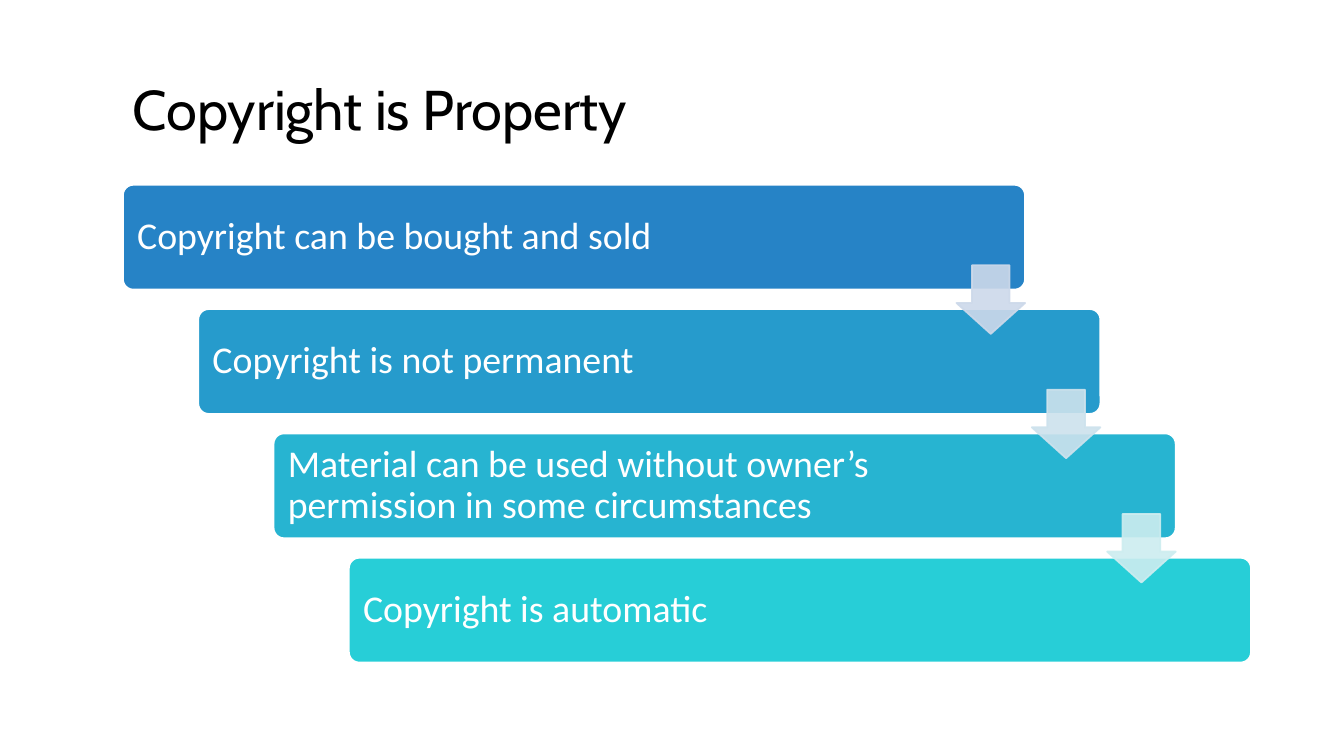
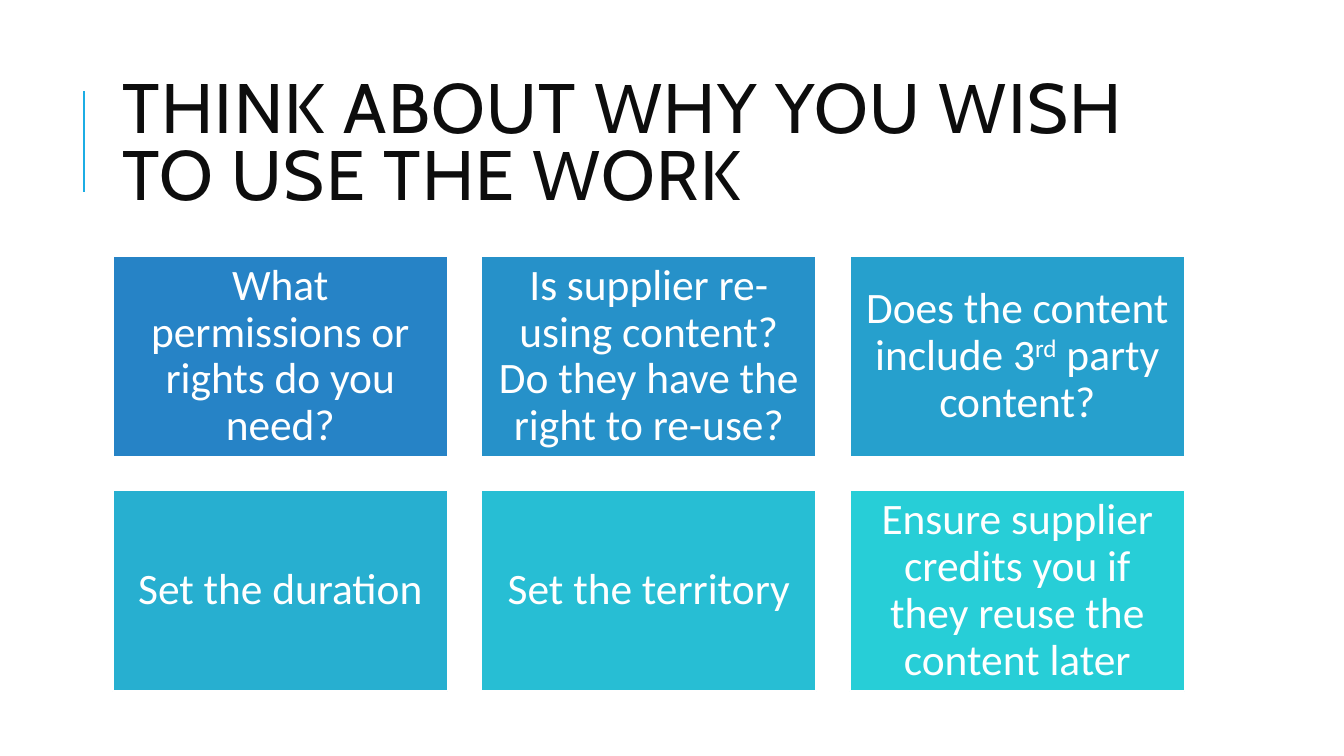
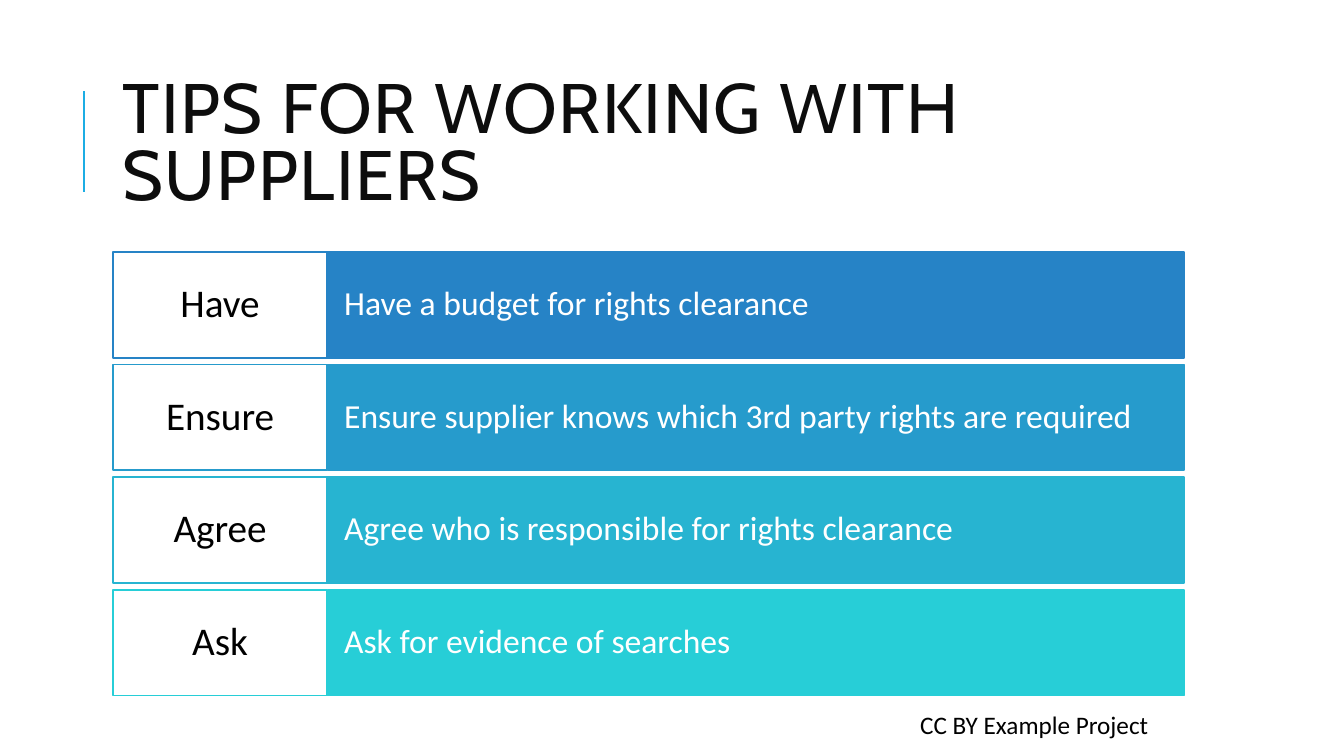
"""Build three slides about copyright and working with suppliers."""
from dataclasses import dataclass
from typing import Any

from pptx import Presentation
from pptx.dml.color import RGBColor
from pptx.enum.shapes import MSO_CONNECTOR, MSO_SHAPE
from pptx.enum.text import MSO_ANCHOR, PP_ALIGN
from pptx.oxml.ns import qn
from pptx.oxml.xmlchemy import OxmlElement
from pptx.util import Pt

RECTANGLE = MSO_SHAPE.RECTANGLE
ROUNDED = MSO_SHAPE.ROUNDED_RECTANGLE
DOWN_ARROW = MSO_SHAPE.DOWN_ARROW
STRAIGHT = MSO_CONNECTOR.STRAIGHT
LEFT, CENTER = PP_ALIGN.LEFT, PP_ALIGN.CENTER
TOP, MIDDLE = MSO_ANCHOR.TOP, MSO_ANCHOR.MIDDLE


@dataclass(frozen=True)
class Theme:
    heading_font: str = "Cabin"
    body_font: str = "Calibri"
    black: str = "000000"
    white: str = "FFFFFF"
    heading: str = "0D0D0D"
    accent: str = "1CADE4"
    four_blues: tuple[str, ...] = ("2683C6", "269BCC", "27B4D1", "27CED7")
    six_blues: tuple[str, ...] = ("2683C6", "2691C9", "26A0CD", "27AFD0", "27BED4", "27CED7")
    pale_blues: tuple[str, ...] = ("CDD9EA", "CDE2ED", "CDEDF0")
    plain_title_size: float = 40
    title_size: float = 50
    step_size: float = 27
    tile_size: float = 31
    label_size: float = 28
    tip_size: float = 24
    credit_size: float = 18
    outline: float = 1.25
    accent_line: float = 1.5


THEME = Theme()


@dataclass(frozen=True)
class Area:
    left: float
    top: float
    width: float
    height: float

    def lengths(self) -> tuple[int, ...]:
        return tuple(Pt(value) for value in (self.left, self.top, self.width, self.height))


@dataclass(frozen=True)
class TextStyle:
    size: float
    color: str = THEME.white
    font: str = THEME.body_font
    alignment: Any = LEFT
    anchor: Any = MIDDLE
    line_spacing: float = 0.9
    space_after: float = 6
    tracking: float = 0
    insets: tuple[float, float, float, float] = (7.2, 3.6, 7.2, 3.6)


@dataclass(frozen=True)
class Tip:
    label: str
    text: str


PLAIN_TITLE = TextStyle(THEME.plain_title_size, THEME.black, THEME.heading_font)
TITLE = TextStyle(THEME.title_size, THEME.heading, THEME.heading_font, line_spacing=0.8, tracking=1)
STEP = TextStyle(THEME.step_size, space_after=9.45, insets=(8, 8, 110, 8))
TILE = TextStyle(THEME.tile_size, alignment=CENTER, space_after=10.85, insets=(9.4, 9.4, 9.4, 9.4))
LABEL = TextStyle(THEME.label_size, THEME.black, alignment=CENTER, space_after=9.8, insets=(8, 7, 8, 7))
TIP = TextStyle(THEME.tip_size, space_after=8.4, insets=(12, 19, 12, 19))
CREDIT = TextStyle(THEME.credit_size, THEME.black, anchor=TOP, line_spacing=1)

STEPS = (
    "Copyright can be bought and sold",
    "Copyright is not permanent",
    "Material can be used without owner’s permission in some circumstances",
    "Copyright is automatic",
)
TILES = (
    ("What permissions or rights do you need?",),
    ("Is supplier re-using content? Do they have the right to re-use?",),
    ("Does the content include 3", "rd", " party content?"),
    ("Set the duration",),
    ("Set the territory",),
    ("Ensure supplier credits you if they reuse the content later",),
)
TIPS = (
    Tip("Have", "Have a budget for rights clearance"),
    Tip("Ensure", "Ensure supplier knows which 3rd party rights are required"),
    Tip("Agree", "Agree who is responsible for rights clearance"),
    Tip("Ask", "Ask for evidence of searches"),
)


def apply_format(target: Any, values: dict[str, Any]) -> None:
    for name, value in values.items():
        setattr(target, name, value)


def write_text(shape: Any, parts: tuple[str, ...], style: TextStyle) -> None:
    frame = shape.text_frame
    left, top, right, bottom = style.insets
    apply_format(frame, {
        "word_wrap": True,
        "vertical_anchor": style.anchor,
        "margin_left": Pt(left),
        "margin_top": Pt(top),
        "margin_right": Pt(right),
        "margin_bottom": Pt(bottom),
    })
    paragraph = frame.paragraphs[0]
    apply_format(paragraph, {
        "alignment": style.alignment,
        "line_spacing": style.line_spacing,
        "space_after": Pt(style.space_after),
    })
    for index, part in enumerate(parts):
        run = paragraph.add_run()
        run.text = part
        apply_format(run.font, {"name": style.font, "size": Pt(style.size)})
        run.font.color.rgb = RGBColor.from_string(style.color)
        properties = run._r.get_or_add_rPr()
        if style.tracking:
            properties.set("spc", str(round(style.tracking * 100)))
        if index % 2:
            properties.set("baseline", "30000")


def add_text(slide: Any, area: Area, text: str, style: TextStyle) -> None:
    write_text(slide.shapes.add_textbox(*area.lengths()), (text,), style)


def add_block(slide: Any, kind: Any, area: Area, fill: str, line: str,
              adjustments: tuple[float, ...] = ()) -> Any:
    shape = slide.shapes.add_shape(kind, *area.lengths())
    shape.shadow.inherit = False
    shape.fill.solid()
    shape.fill.fore_color.rgb = RGBColor.from_string(fill)
    shape.line.color.rgb = RGBColor.from_string(line)
    shape.line.width = Pt(THEME.outline)
    for index, value in enumerate(adjustments):
        shape.adjustments[index] = value
    return shape


def set_opacity(shape: Any, percent: int) -> None:
    for color in shape.element.spPr.iter(qn("a:srgbClr")):
        alpha = OxmlElement("a:alpha")
        alpha.set("val", str(percent * 1000))
        color.append(alpha)


def add_title(slide: Any, text: str) -> None:
    line = slide.shapes.add_connector(STRAIGHT, Pt(60), Pt(136.8), Pt(60), Pt(64.8))
    line.line.color.rgb = RGBColor.from_string(THEME.accent)
    line.line.width = Pt(THEME.accent_line)
    line.element.spPr.append(OxmlElement("a:effectLst"))
    add_text(slide, Area(80.6, 46, 765.4, 118), text, TITLE)


def build_property(slide: Any) -> None:
    add_text(slide, Area(87.8, 40.3, 805.7, 80), "Copyright is Property", PLAIN_TITLE)
    areas = [Area(87.8 + 53.8 * index, 132 + 88.8 * index, 644.4, 74.9) for index in range(len(STEPS))]
    for area, text, color in zip(areas, STEPS, THEME.four_blues):
        step = add_block(slide, ROUNDED, area, color, THEME.white, (0.1,))
        write_text(step, (text,), STEP)
    side = 49
    for area, color in zip(areas, THEME.pale_blues):
        place = Area(area.left + area.width - side, area.top + 57.5, side, side)
        set_opacity(add_block(slide, DOWN_ARROW, place, color, color, (0.55, 0.45)), 90)


def build_purpose(slide: Any) -> None:
    add_title(slide, "THINK ABOUT WHY YOU WISH TO USE THE WORK")
    width, height, gap, columns = 239.2, 143.5, 24, 3
    for index, (parts, color) in enumerate(zip(TILES, THEME.six_blues)):
        row, column = divmod(index, columns)
        area = Area(80.6 + column * (width + gap), 182.9 + row * (height + gap), width, height)
        write_text(add_block(slide, RECTANGLE, area, color, THEME.white), parts, TILE)


def build_tips(slide: Any) -> None:
    add_title(slide, "TIPS FOR WORKING WITH SUPPLIERS")
    add_text(slide, Area(650.2, 503.3, 182.2, 28.8), "CC BY Example Project", CREDIT)
    left, label_width, height = 80.6, 153.2, 75.6
    for index, (tip, color) in enumerate(zip(TIPS, THEME.four_blues)):
        top = 180 + 80.4 * index
        bar = add_block(slide, RECTANGLE, Area(left + label_width, top, 612.2, height), color, color)
        write_text(bar, (tip.text,), TIP)
        label = add_block(slide, RECTANGLE, Area(left, top, label_width, height), THEME.white, color)
        write_text(label, (tip.label,), LABEL)


def main() -> None:
    presentation = Presentation()
    presentation.slide_width, presentation.slide_height = Pt(960), Pt(540)
    blank = presentation.slide_layouts[6]
    for build in (build_property, build_purpose, build_tips):
        build(presentation.slides.add_slide(blank))
    presentation.save("out.pptx")


if __name__ == "__main__":
    main()
